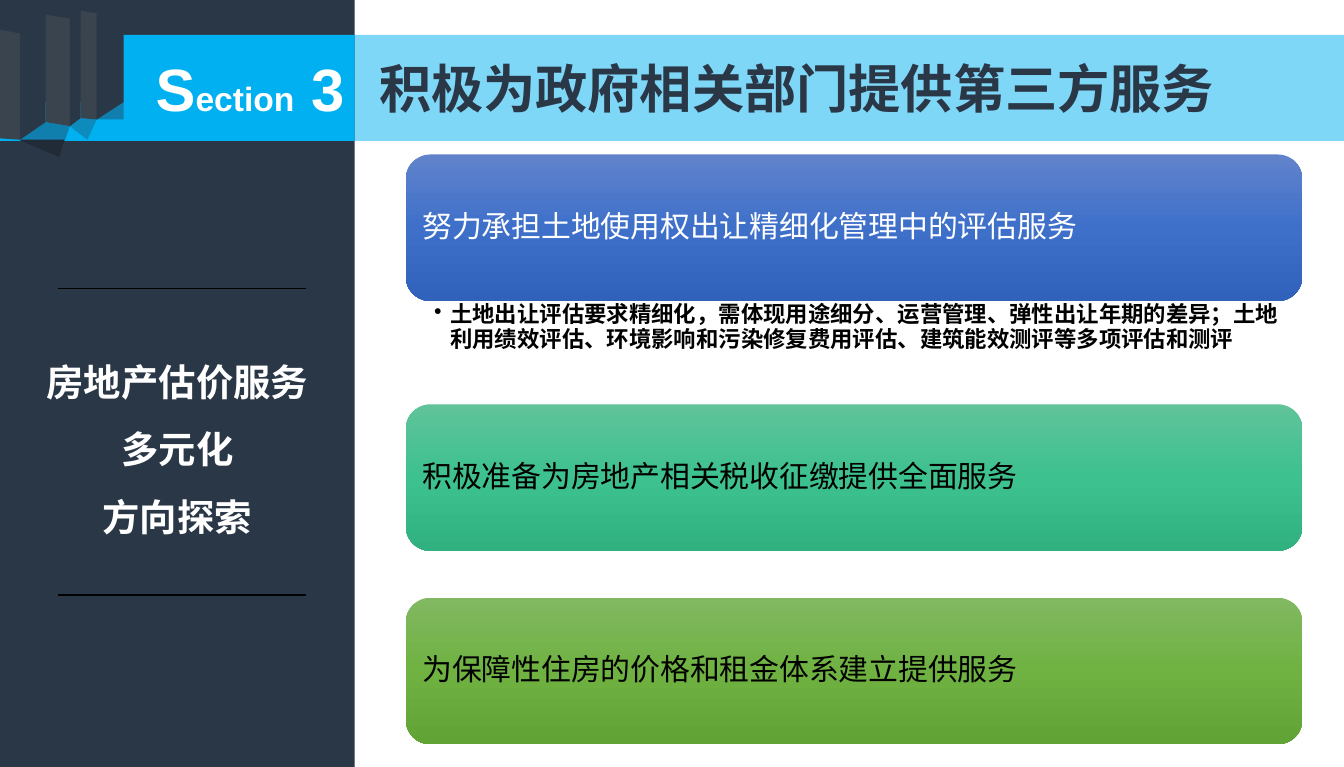
from copy import deepcopy

from pptx import Presentation
from pptx import util as u
from pptx.dml.color import RGBColor
from pptx.enum import shapes, text
from pptx.oxml import ns
from lxml import etree

Inches = u.Inches
CJK = "Noto Sans CJK SC"
COLORS = {
    "navy": "2A3747", "fold": "39444F", "sky": "01B0F1", "white": "FFFFFF",
    "black": "000000", "shade": "212A37",
}
BLUE = ("6183CB", "3E70CA", "3062BB")
TEAL = ("60C39A", "3DC18F", "31B080")
GREEN = ("81B861", "6FB242", "62A336")


def rgb(name):
    return RGBColor.from_string(COLORS[name])


def add_xml(parent, tag, **attributes):
    return etree.SubElement(parent, ns.qn(tag), attributes)


def paint(shape, color, alpha=100):
    shape.shadow.inherit = False
    shape.line.fill.background()
    shape.fill.solid()
    shape.fill.fore_color.rgb = rgb(color)
    if alpha < 100:
        clr = shape.fill._xPr.find(ns.qn("a:solidFill"))[0]
        add_xml(clr, "a:alpha", val=str(alpha * 1000))


def paint_gradient(shape, hexes):
    shape.shadow.inherit = False
    shape.line.fill.background()
    shape.fill.gradient()
    shape.fill.gradient_angle = 270
    stops = shape.fill._fill._gradFill.find(ns.qn("a:gsLst"))
    stops.insert(1, deepcopy(stops[0]))
    for stop, position, color in zip(shape.fill.gradient_stops, (0, 0.5, 1), hexes):
        stop.position = position
        stop.color.rgb = RGBColor.from_string(color)


def write(frame, paragraphs, font=CJK, color="white", bold=False, spacing=None,
          align=text.PP_ALIGN.LEFT, anchor=text.MSO_ANCHOR.TOP,
          insets=(0.1, 0.05, 0.1, 0.05)):
    """Fill a text frame; each paragraph is a list of (words, size) runs."""
    frame.word_wrap = True
    frame.auto_size = text.MSO_AUTO_SIZE.NONE
    frame.vertical_anchor = anchor
    (frame.margin_left, frame.margin_top,
     frame.margin_right, frame.margin_bottom) = map(Inches, insets)
    for i, runs in enumerate(paragraphs):
        paragraph = frame.add_paragraph() if i else frame.paragraphs[0]
        paragraph.alignment = align
        paragraph.line_spacing = spacing
        for words, size in runs:
            run = paragraph.add_run()
            run.text = words
            run.font.size = u.Pt(size)
            run.font.name = font
            run.font.bold = bold
            run.font.color.rgb = rgb(color)
            add_xml(run.font._element, "a:ea", typeface=font)


def add_block(slide, box, color, alpha=100):
    block = slide.shapes.add_shape(shapes.MSO_SHAPE.RECTANGLE, *map(Inches, box))
    paint(block, color, alpha)


def add_polygon(slide, points, color, alpha=100):
    corners = [(Inches(x), Inches(y)) for x, y in points]
    builder = slide.shapes.build_freeform(*corners[0], scale=1.0)
    builder.add_line_segments(corners[1:], close=True)
    paint(builder.convert_to_shape(), color, alpha)


def add_rule(slide, x1, x2, y):
    rule = slide.shapes.add_connector(
        shapes.MSO_CONNECTOR.STRAIGHT, Inches(x1), Inches(y), Inches(x2), Inches(y))
    rule.line.color.rgb = rgb("black")
    rule.line.width = u.Pt(0.75)
    add_xml(rule._element.spPr, "a:effectLst")


def add_folded_screen(slide, x, y):
    # Cast shadows, then panels between neighbouring folds (x, top, bottom)
    shadows = [
        ([(0.15, 1.04), (0.34, 0.91), (0.52, 0.94), (0.44, 1.17)], 40),
        ([(0.52, 0.94), (0.6, 0.88), (0.72, 0.89), (0.65, 1.04)], 30),
        ([(0.72, 0.89), (0.92, 0.76), (0.92, 0.89)], 40),
    ]
    for points, alpha in shadows:
        add_polygon(slide, [(x + px, y + py) for px, py in points], "navy", alpha)
    add_polygon(slide, [(x + 0.14, y + 1.04), (x + 0.48, y + 1.04),
                        (x + 0.44, y + 1.17)], "shade")
    folds = [(0, 0.22, 1.03), (0.15, 0.25, 1.04), (0.34, 0.11, 0.91),
             (0.52, 0.14, 0.94), (0.6, 0.08, 0.88), (0.72, 0.1, 0.89),
             (0.92, 0, 0.76)]
    for i, ((x1, t1, b1), (x2, t2, b2)) in enumerate(zip(folds, folds[1:])):
        corners = [(x1, t1), (x2, t2), (x2, b2), (x1, b1)]
        add_polygon(slide, [(x + px, y + py) for px, py in corners],
                    "navy" if i % 2 else "fold")


def add_sidebar(slide, x, y, w, h):
    add_block(slide, (x, y, w, h), "navy")
    for rule_y in (2.15, 4.43):
        add_rule(slide, x + 0.43, x + 2.28, y + rule_y)
    topic = slide.shapes.add_textbox(*map(Inches, (x, y + 2.46, w, 1.56)))
    lines = ("房地产估价服务", "多元化", "方向探索")
    write(topic.text_frame, [[(line, 20)] for line in lines], bold=True,
          spacing=1.5, align=text.PP_ALIGN.CENTER)


def add_header(slide, x, y, w, h, split):
    add_block(slide, (x, y, split, h), "sky")
    add_block(slide, (x + split, y, w - split, h), "sky", 50)
    # The corner above the band and left of the label stays dark
    add_block(slide, (x, y, 0.91, 0.5), "navy")
    add_folded_screen(slide, x, 0)
    section = slide.shapes.add_textbox(*map(Inches, (x + 1.06, y + 0.08, 2.6, 0.64)))
    write(section.text_frame, [[("S", 32), ("ection", 18), (" 3", 32)]],
          font="Arial", bold=True)
    title = slide.shapes.title
    title.left, title.top, title.width, title.height = map(
        Inches, (x + split + 0.08, y + 0.11, w - split - 0.08, 0.57))
    write(title.text_frame, [[("积极为政府相关部门提供第三方服务", 28)]],
          color="navy", bold=True)


def add_service(slide, x, y, w, h, heading, hexes, color, detail=None):
    card = slide.shapes.add_shape(
        shapes.MSO_SHAPE.ROUNDED_RECTANGLE, *map(Inches, (x, y, w, h)))
    paint_gradient(card, hexes)
    write(card.text_frame, [[(heading, 16)]], color=color, spacing=0.9,
          anchor=text.MSO_ANCHOR.MIDDLE, insets=(0.07,) * 4)
    if detail:
        note = slide.shapes.add_textbox(*map(Inches, (x, y + h, w, 0.77)))
        write(note.text_frame, [[(detail, 12)]], color="black", bold=True,
              spacing=0.9, insets=(0.21, 0.02, 0.09, 0.02))
        properties = note.text_frame.paragraphs[0]._p.get_or_add_pPr()
        properties.set("marL", str(Inches(0.12)))
        properties.set("indent", str(-Inches(0.12)))
        add_xml(properties, "a:buChar", char="•")


def main():
    deck = Presentation()
    deck.slide_width, deck.slide_height = Inches(10), Inches(5.71)
    slide = deck.slides.add_slide(deck.slide_layouts[5])
    sidebar_width = 2.64
    add_sidebar(slide, 0, 0, sidebar_width, 5.71)
    add_header(slide, 0, 0.26, 10, 0.79, sidebar_width)

    # Services
    services = [
        (1.15, "努力承担土地使用权出让精细化管理中的评估服务", BLUE, "white",
         "土地出让评估要求精细化，需体现用途细分、运营管理、弹性出让年期的差异；"
         "土地利用绩效评估、环境影响和污染修复费用评估、建筑能效测评等多项评估和测评"),
        (3.01, "积极准备为房地产相关税收征缴提供全面服务", TEAL, "black"),
        (4.45, "为保障性住房的价格和租金体系建立提供服务", GREEN, "black"),
    ]
    for top, *content in services:
        add_service(slide, 3.02, top, 6.67, 1.09, *content)

    # The title is drawn above the header band
    tree = slide.shapes._spTree
    tree.append(slide.shapes.title._element)
    deck.save("out.pptx")


if __name__ == "__main__":
    main()
